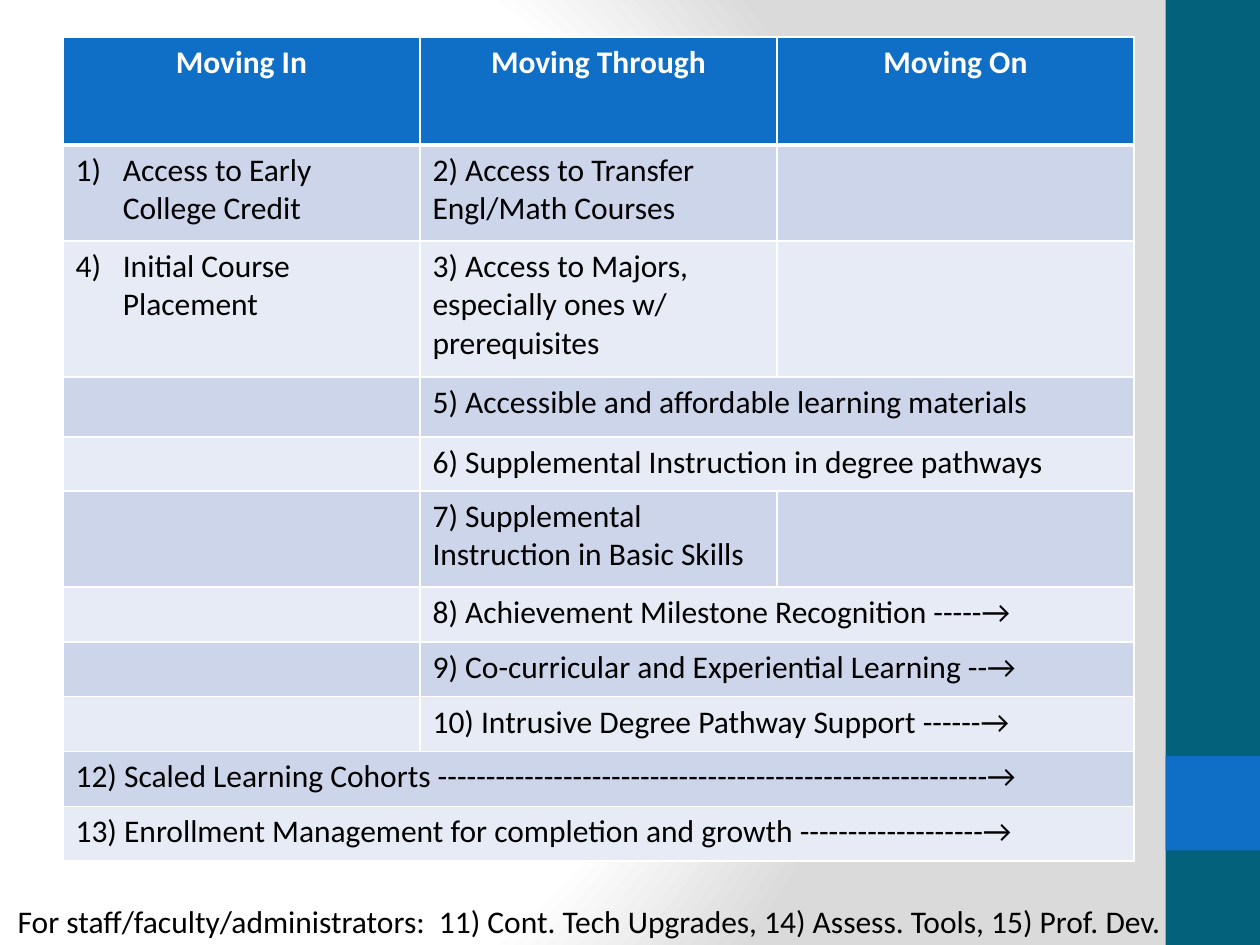
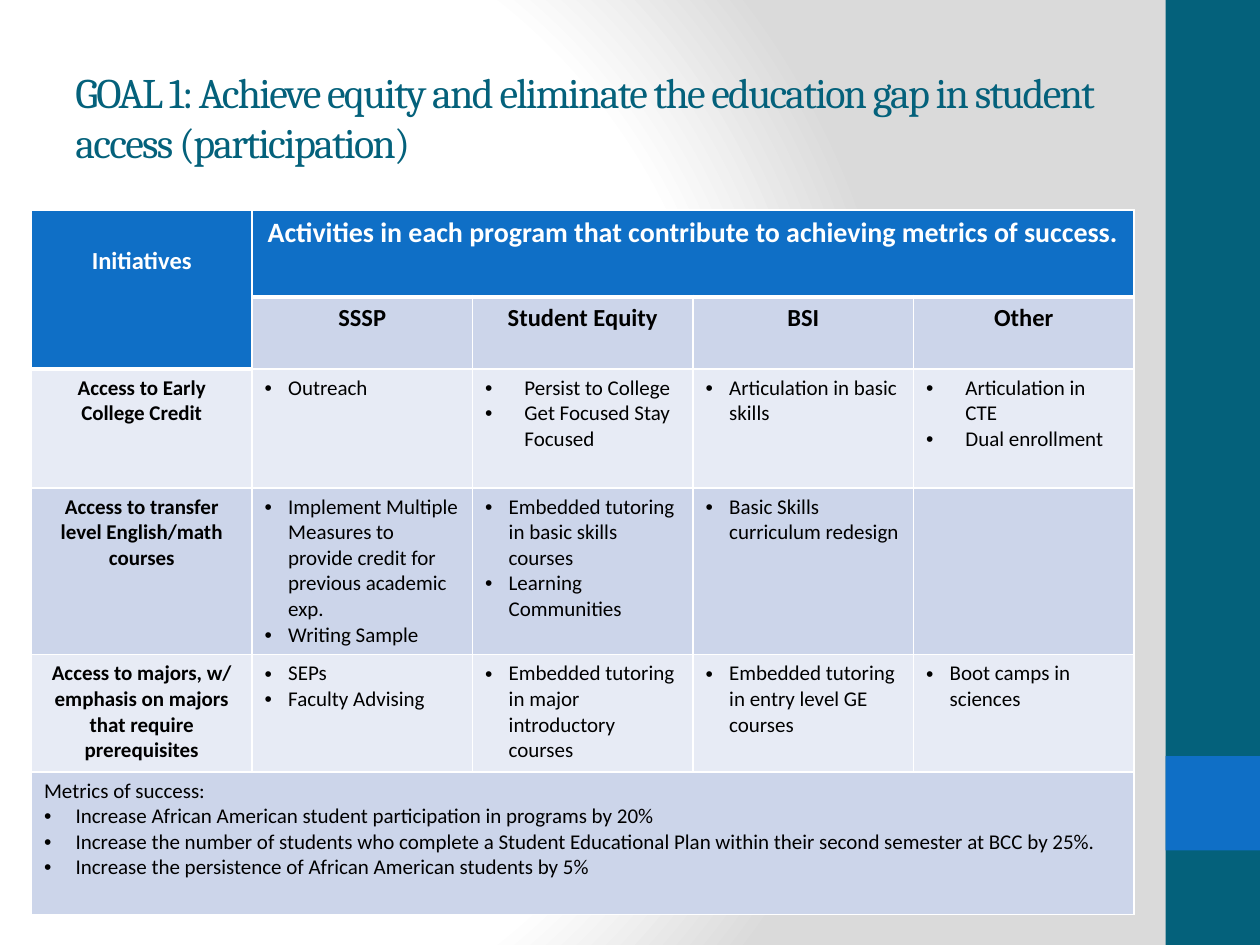
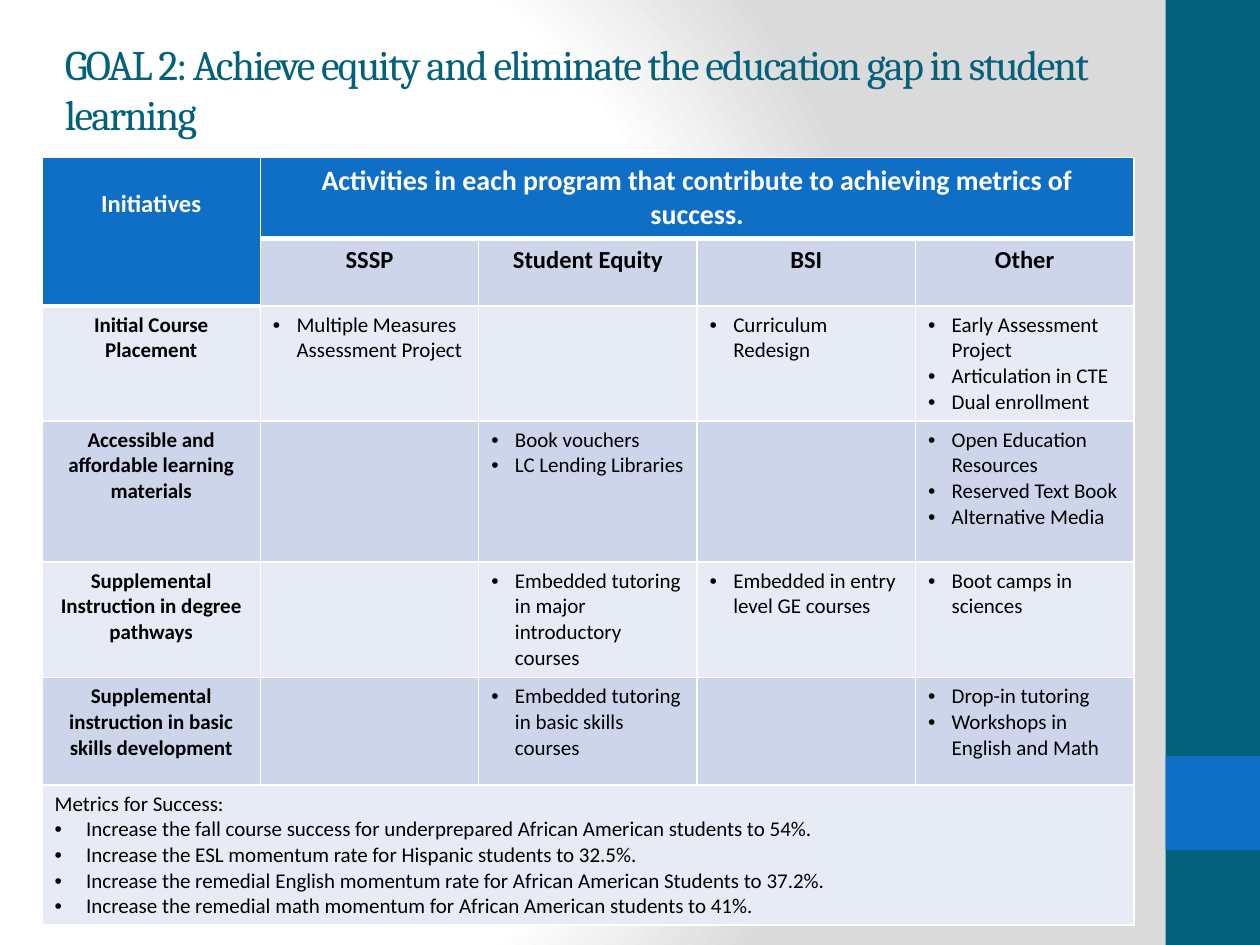
from pptx import Presentation
from pptx.dml.color import RGBColor
from pptx.enum.shapes import MSO_SHAPE
from pptx.enum.text import MSO_ANCHOR, PP_ALIGN
from pptx.oxml import parse_xml
from pptx.oxml.ns import nsdecls
from pptx.util import Pt

TEAL, BLUE, WHITE, BLACK = "04617B", "0F6FC6", "FFFFFF", "000000"
BANDS = ("CCD5EA", "E7EBF5")
BODY_FONT, TITLE_FONT = "Calibri", "Cambria"
BACKGROUND = [(0, WHITE), (75, WHITE), (100, "DADADA")]
SIDE_BANDS = [(0, 540, TEAL), (432, 54, BLUE)]

PATHWAY_HEADS = ["Moving In", "Moving Through", "Moving On"]
PATHWAY_ROWS = [
    [(1, "Access to Early College Credit"), "2) Access to Transfer Engl/Math Courses", ""],
    [(4, "Initial Course Placement"), "3) Access to Majors, especially ones w/ prerequisites", ""],
    ["", "5) Accessible and affordable learning materials", None],
    ["", "6) Supplemental Instruction in degree pathways", None],
    ["", "7) Supplemental Instruction in Basic Skills", ""],
    ["", "8) Achievement Milestone Recognition -----→", None],
    ["", "9) Co-curricular and Experiential Learning --→", None],
    ["", "10) Intrusive Degree Pathway Support ------→", None],
    ["12) Scaled Learning Cohorts ---------------------------------------------------------→", None, None],
    ["13) Enrollment Management for completion and growth -------------------→", None, None],
]
PATHWAY_HEIGHTS = [61.7, 54.9, 77.7, 34.3, 30.9, 54.9] + [31.3] * 5
STAFF_NOTE = ("For staff/faculty/administrators:  11) Cont. Tech Upgrades, "
              "14) Assess. Tools, 15) Prof. Dev.")

ACTIVITIES_HEAD = "Activities in each program that contribute to achieving metrics of success."
PROGRAMS = ["SSSP", "Student Equity", "BSI", "Other"]
GOALS = [
    {
        "title": "GOAL 1: Achieve equity and eliminate the education gap in student access (participation)",
        "title_at": (36, 21.6),
        "table_at": (18, 120),
        "width": 630,
        "head_margin": 20.6,
        "heights": [49.7, 41.1, 68, 95.4, 66.9, 81.7],
        "wide_indents": {(0, 2), (0, 4)},
        "rows": [
            ["Access to Early College Credit", ["Outreach"],
             ["Persist to College", "Get Focused Stay Focused"],
             ["Articulation in basic skills"],
             ["Articulation in CTE", "Dual enrollment"]],
            ["Access to transfer level English/math courses",
             ["Implement Multiple Measures to provide credit for previous academic exp.",
              "Writing Sample"],
             ["Embedded tutoring in basic skills courses", "Learning Communities"],
             ["Basic Skills curriculum redesign"], []],
            ["Access to majors, w/ emphasis on majors that require prerequisites",
             ["SEPs", "Faculty Advising"],
             ["Embedded tutoring in major introductory courses"],
             ["Embedded tutoring in entry level GE courses"],
             ["Boot camps in sciences"]],
        ],
        "metrics_head": "Metrics of success:",
        "metrics": [
            "Increase African American student participation in programs by 20%",
            "Increase the number of students who complete a Student Educational Plan "
            "within their second semester at BCC by 25%.",
            "Increase the persistence of African American students by 5%",
        ],
    },
    {
        "title": "GOAL 2: Achieve equity and eliminate the education gap in student learning",
        "title_at": (30, 5.76),
        "table_at": (24, 90),
        "width": 624,
        "head_margin": 18.2,
        "heights": [46.3, 38.6, 65.7, 80.6, 66, 61.4, 80],
        "wide_indents": set(),
        "rows": [
            ["Initial Course Placement", ["Multiple Measures Assessment Project"], [],
             ["Curriculum Redesign"],
             ["Early Assessment Project", "Articulation in CTE", "Dual enrollment"]],
            ["Accessible and affordable learning materials", [],
             ["Book vouchers", "LC Lending Libraries"], [],
             ["Open Education Resources", "Reserved Text Book", "Alternative Media"]],
            ["Supplemental Instruction in degree pathways", [],
             ["Embedded tutoring in major introductory courses"],
             ["Embedded in entry level GE courses"], ["Boot camps in sciences"]],
            ["Supplemental instruction in basic skills development", [],
             ["Embedded tutoring in basic skills courses"], [],
             ["Drop-in tutoring", "Workshops in English and Math"]],
        ],
        "metrics_head": "Metrics for Success:",
        "metrics": [
            "Increase the fall course success for underprepared African American students to 54%.",
            "Increase the ESL momentum rate for Hispanic students to 32.5%.",
            "Increase the remedial English momentum rate for African American Students to 37.2%.",
            "Increase the remedial math momentum for African American students to 41%.",
        ],
    },
]


def rgb(color):
    return RGBColor.from_string(color)


def element(xml):
    tag, rest = xml[1:].split(" ", 1)
    return parse_xml(f"<{tag} {nsdecls('a', 'p')} {rest}")


def write(tf, lines, size, color=BLACK, bold=False, align=PP_ALIGN.LEFT, font=BODY_FONT):
    tf.text = "\n".join(lines)
    for p in tf.paragraphs:
        p.alignment = align
        for r in p.runs:
            r.font.name, r.font.size, r.font.bold = font, Pt(size), bold
            r.font.color.rgb = rgb(color)


def add_bullet(p, indent, number=None):
    pPr = p._p.get_or_add_pPr()
    pPr.set("marL", str(Pt(indent)))
    pPr.set("indent", str(-Pt(indent)))
    if number:
        pPr.append(element(f'<a:buAutoNum type="arabicParenR" startAt="{number}"/>'))
    else:
        pPr.append(element('<a:buFont typeface="Arial"/>'))
        pPr.append(element('<a:buChar char="•"/>'))


def write_head(cell, text, size, color=WHITE):
    write(cell.text_frame, [text], size, color, True, PP_ALIGN.CENTER)


def set_background(master):
    stops = "".join(f'<a:gs pos="{pos * 1000}"><a:srgbClr val="{color}"/></a:gs>'
                    for pos, color in BACKGROUND)
    cSld = master._element.cSld
    for bg in cSld.xpath("p:bg"):
        cSld.remove(bg)
    cSld.insert(0, element(
        '<p:bg ><p:bgPr><a:gradFill rotWithShape="1">'
        f'<a:gsLst>{stops}</a:gsLst><a:path path="circle">'
        '<a:fillToRect l="20000" t="50000" r="100000" b="50000"/></a:path></a:gradFill>'
        '<a:effectLst/></p:bgPr></p:bg>'))


def add_slide(prs):
    s = prs.slides.add_slide(prs.slide_layouts[6])
    for top, height, color in SIDE_BANDS:
        sp = s.shapes.add_shape(MSO_SHAPE.RECTANGLE, Pt(666), Pt(top), Pt(54), Pt(height))
        sp.shadow.inherit = False
        sp.fill.solid()
        sp.fill.fore_color.rgb = rgb(color)
        sp.line.fill.background()
    return s


def add_grid(s, at, width, heights, cols, heads):
    left, top = at
    table = s.shapes.add_table(len(heights), cols, Pt(left), Pt(top),
                               Pt(width), Pt(sum(heights))).table
    for col in table.columns:
        col.width = Pt(width / cols)
    for i, height in enumerate(heights):
        table.rows[i].height = Pt(height)
        for j in range(cols):
            cell = table.cell(i, j)
            cell.fill.solid()
            cell.fill.fore_color.rgb = rgb(BLUE if (i, j) in heads else BANDS[(i + 1) % 2])
            widths = {"L": 1, "R": 1, "T": 3 if (i - 1, j) in heads else 1,
                      "B": 3 if (i, j) in heads else 1}
            for k, (side, weight) in enumerate(widths.items()):
                cell._tc.get_or_add_tcPr().insert(k, element(
                    f'<a:ln{side} w="{Pt(weight)}"><a:solidFill>'
                    f'<a:srgbClr val="{WHITE}"/></a:solidFill></a:ln{side}>'))
    return table


def add_pathway(prs):
    s = add_slide(prs)
    table = add_grid(s, (36, 21.2), 612, PATHWAY_HEIGHTS, 3, {(0, j) for j in range(3)})
    for j, text in enumerate(PATHWAY_HEADS):
        write_head(table.cell(0, j), text, 18)
    for i, row in enumerate(PATHWAY_ROWS, 1):
        if None in row:
            table.cell(i, row.index(None) - 1).merge(table.cell(i, 2))
        for j, item in enumerate(row):
            if not item:
                continue
            number, text = item if isinstance(item, tuple) else (None, item)
            tf = table.cell(i, j).text_frame
            write(tf, [text], 18)
            if number:
                add_bullet(tf.paragraphs[0], 27, number)
    tf = s.shapes.add_textbox(Pt(3), Pt(512), Pt(675), Pt(29)).text_frame
    tf.word_wrap = False
    write(tf, [STAFF_NOTE], 18)


def add_goal(prs, goal):
    s = add_slide(prs)
    left, top = goal["title_at"]
    tf = s.shapes.add_textbox(Pt(left), Pt(top), Pt(600), Pt(90)).text_frame
    tf.word_wrap = True
    tf.vertical_anchor = MSO_ANCHOR.MIDDLE
    write(tf, [goal["title"]], 24, TEAL, font=TITLE_FONT)
    tf.paragraphs[0].runs[0]._r.get_or_add_rPr().set("spc", "-100")

    heads = {(0, j) for j in range(5)} | {(1, 0)}
    table = add_grid(s, goal["table_at"], goal["width"], goal["heights"], 5, heads)
    last = len(goal["heights"]) - 1
    table.cell(0, 0).merge(table.cell(1, 0))
    table.cell(0, 1).merge(table.cell(0, 4))
    table.cell(last, 0).merge(table.cell(last, 4))
    write_head(table.cell(0, 0), "Initiatives", 14)
    table.cell(0, 0).margin_top = Pt(goal["head_margin"])
    write_head(table.cell(0, 1), ACTIVITIES_HEAD, 16)
    for j, program in enumerate(PROGRAMS, 1):
        write_head(table.cell(1, j), program, 14, BLACK)
    for i, (initiative, *activities) in enumerate(goal["rows"]):
        write_head(table.cell(i + 2, 0), initiative, 12, BLACK)
        for j, lines in enumerate(activities, 1):
            if lines:
                tf = table.cell(i + 2, j).text_frame
                write(tf, lines, 12)
                for p in tf.paragraphs:
                    add_bullet(p, 22.5 if (i, j) in goal["wide_indents"] else 13.5)
    tf = table.cell(last, 0).text_frame
    write(tf, [goal["metrics_head"]] + goal["metrics"], 12)
    for p in tf.paragraphs[1:]:
        add_bullet(p, 18)


def main():
    prs = Presentation()
    prs.slide_width, prs.slide_height = Pt(720), Pt(540)
    set_background(prs.slide_master)
    add_pathway(prs)
    for goal in GOALS:
        add_goal(prs, goal)
    prs.save("out.pptx")


if __name__ == "__main__":
    main()
